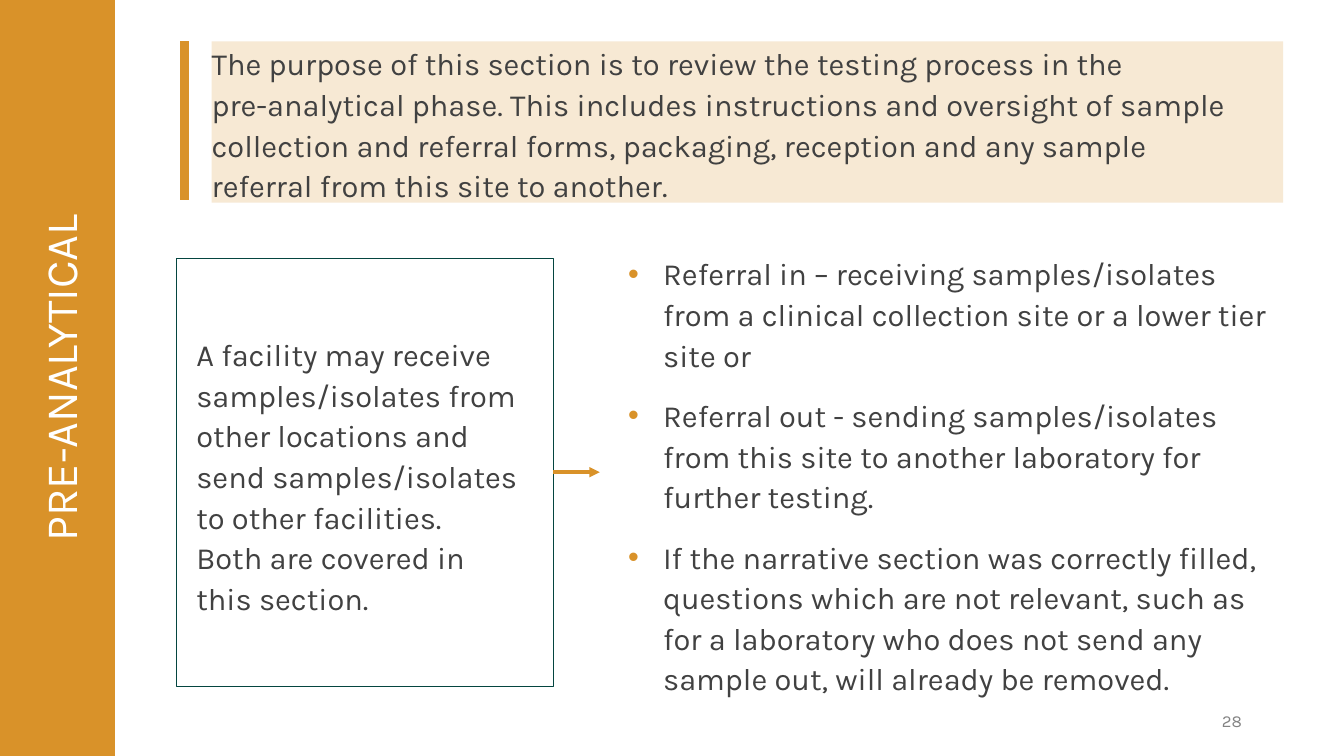
"""Build the pre-analytical section slide."""
from dataclasses import dataclass

from lxml import etree
from pptx import Presentation
from pptx.dml.color import RGBColor
from pptx.enum.shapes import MSO_CONNECTOR, MSO_SHAPE
from pptx.enum.text import MSO_ANCHOR, PP_ALIGN
from pptx.oxml.ns import qn
from pptx.util import Pt

RECTANGLE = MSO_SHAPE.RECTANGLE
STRAIGHT = MSO_CONNECTOR.STRAIGHT
TOP, MIDDLE = MSO_ANCHOR.TOP, MSO_ANCHOR.MIDDLE
LEFT, CENTER, RIGHT = PP_ALIGN.LEFT, PP_ALIGN.CENTER, PP_ALIGN.RIGHT

FONT = "Karla"
ORANGE, CREAM, GREEN = "D99229", "F7E9D4", "044540"
TEXT, GREY, WHITE = "414141", "838383", "FFFFFF"

PURPOSE = (
    "The purpose of this section is to review the testing process in the\n"
    "pre-analytical phase. This includes instructions and oversight of sample "
    "collection and referral forms, packaging, reception and any sample\n"
    "referral from this site to another."
)
FACILITY = (
    "A facility may receive samples/isolates from other locations and "
    "send samples/isolates to other facilities.\n"
    "Both are covered in\n"
    "this section."
)
REFERRALS = [
    "Referral in – receiving samples/isolates from a clinical collection site "
    "or a lower tier site or",
    "Referral out - sending samples/isolates from this site to another laboratory "
    "for further testing.",
    "If the narrative section was correctly filled, questions which are not relevant, "
    "such as for a laboratory who does not send any sample out, will already be removed.",
]


@dataclass(frozen=True)
class Box:
    left: float
    top: float
    width: float
    height: float


@dataclass(frozen=True)
class Rule:
    start: tuple[float, float]
    end: tuple[float, float]
    width: float
    arrow: bool = False


BAND = Box(0, 0, 82, 540)
TITLE = Box(-218.2, 242.6, 540, 54.7)
PURPOSE_PANEL = Box(151.2, 29.5, 765.4, 115.2)
FACILITY_PANEL = Box(125.9, 184.3, 269.3, 306)
REFERRAL_LIST = Box(434.2, 184.3, 484.6, 306)
PAGE_NUMBER = Box(678.2, 500.4, 216, 28.8)
RULES = [
    Rule((395.2, 337.3), (428.4, 337.3), 2.5, arrow=True),
    Rule((131.8, 29.5), (131.8, 142.6), 6),
]


def color(value: str) -> RGBColor:
    """Turn a hex string into a colour."""
    return RGBColor.from_string(value)


def place(box: Box) -> list:
    """Give the four lengths of a box in points."""
    return [Pt(length) for length in (box.left, box.top, box.width, box.height)]


def add_rectangle(slide, box: Box, fill: str = "", line: str = ""):
    """Draw a rectangle with an optional fill and thin outline."""
    shape = slide.shapes.add_shape(RECTANGLE, *place(box))
    shape.shadow.inherit = False
    if fill:
        shape.fill.solid()
        shape.fill.fore_color.rgb = color(fill)
    else:
        shape.fill.background()
    if line:
        shape.line.color.rgb = color(line)
        shape.line.width = Pt(0.5)
    else:
        shape.line.fill.background()
    return shape


def add_bullet(paragraph) -> None:
    """Give a paragraph an orange bullet and a hanging indent."""
    properties = paragraph._p.get_or_add_pPr()
    properties.set("marL", str(Pt(28)))
    properties.set("indent", str(Pt(-25)))
    bullet_color = etree.SubElement(properties, qn("a:buClr"))
    etree.SubElement(bullet_color, qn("a:srgbClr"), val=ORANGE)
    etree.SubElement(properties, qn("a:buFont"), typeface="Arial")
    etree.SubElement(properties, qn("a:buChar"), char="•")


def write(shape, *texts: str, size: float = 22, ink: str = TEXT, align=LEFT, anchor=TOP,
          margins: tuple = (7.2, 3.6, 7.2, 3.6), spacing: float = 1.1,
          after: float = 0, bullets: bool = False) -> None:
    """Write one formatted paragraph per text into a shape."""
    frame = shape.text_frame
    frame.word_wrap = True
    frame.vertical_anchor = anchor
    (frame.margin_left, frame.margin_top,
     frame.margin_right, frame.margin_bottom) = [Pt(margin) for margin in margins]
    for index, text in enumerate(texts):
        paragraph = frame.add_paragraph() if index else frame.paragraphs[0]
        if bullets:
            add_bullet(paragraph)
        paragraph.text = text
        paragraph.alignment = align
        paragraph.line_spacing = spacing
        paragraph.space_after = Pt(after)
        for run in paragraph.runs:
            run.font.name = FONT
            run.font.size = Pt(size)
            run.font.color.rgb = color(ink)


def add_rule(slide, rule: Rule) -> None:
    """Draw an orange line, with an arrowhead if asked."""
    points = [Pt(value) for value in rule.start + rule.end]
    connector = slide.shapes.add_connector(STRAIGHT, *points)
    connector.line.color.rgb = color(ORANGE)
    connector.line.width = Pt(rule.width)
    if rule.arrow:
        etree.SubElement(connector.line._get_or_add_ln(), qn("a:tailEnd"), type="triangle")
    etree.SubElement(connector._element.spPr, qn("a:effectLst"))


def main() -> None:
    """Assemble and save the slide."""
    presentation = Presentation()
    presentation.slide_width, presentation.slide_height = Pt(960), Pt(540)
    slide = presentation.slides.add_slide(presentation.slide_layouts[6])

    add_rectangle(slide, BAND, fill=ORANGE)
    page_number = slide.shapes.add_textbox(*place(PAGE_NUMBER))
    write(page_number, "28", size=12, ink=GREY, align=RIGHT, anchor=MIDDLE, spacing=1)
    referral_list = slide.shapes.add_textbox(*place(REFERRAL_LIST))
    write(referral_list, *REFERRALS, anchor=MIDDLE, margins=(11.5, 11.5, 11.5, 8.6),
          after=14, bullets=True)
    title = slide.shapes.add_textbox(*place(TITLE))
    title.rotation = 270
    write(title, "PRE-ANALYTICAL", size=32, ink=WHITE, align=CENTER, spacing=0.9)

    purpose = add_rectangle(slide, PURPOSE_PANEL, fill=CREAM)
    write(purpose, PURPOSE, margins=(0, 0, 0, 0))
    facility = add_rectangle(slide, FACILITY_PANEL, line=GREEN)
    write(facility, FACILITY, anchor=MIDDLE, margins=(14.4, 11.5, 11.5, 8.6))
    for rule in RULES:
        add_rule(slide, rule)
    presentation.save("out.pptx")


if __name__ == "__main__":
    main()
